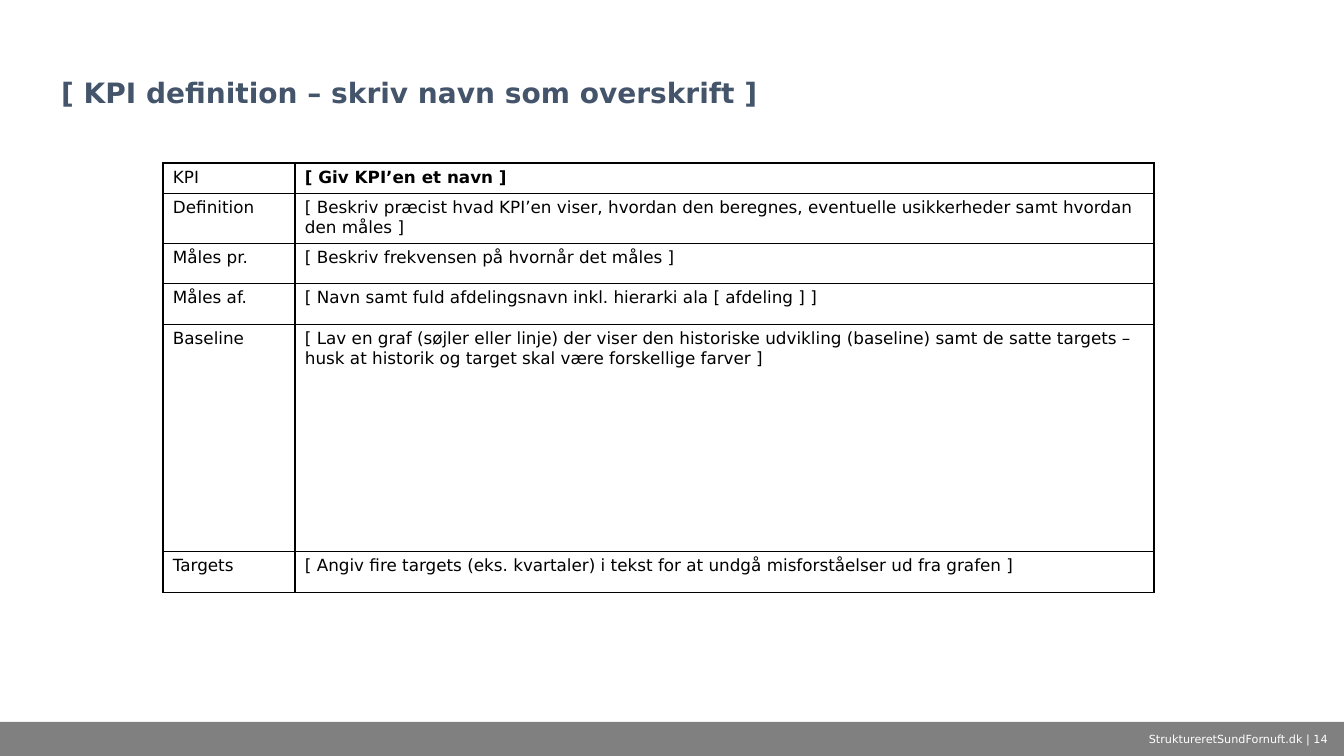
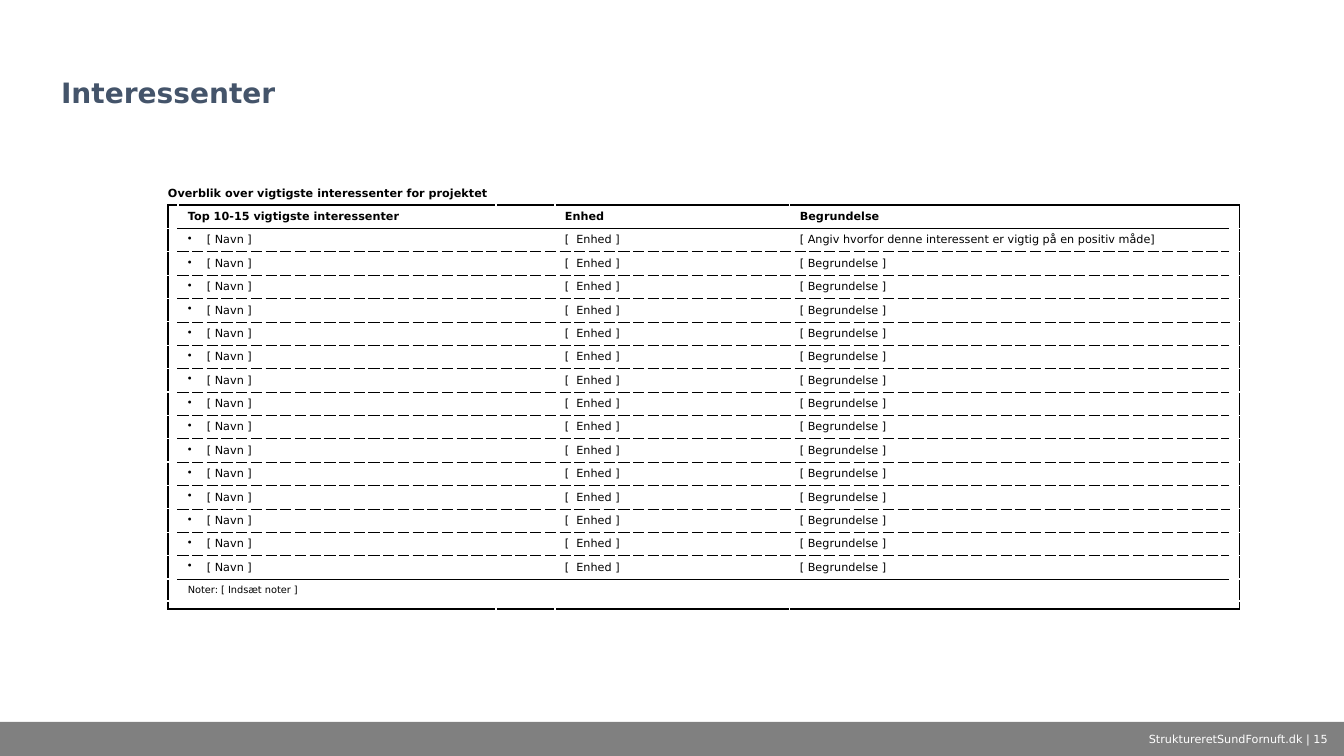
from dataclasses import dataclass

from lxml.etree import SubElement
from pptx import Presentation
from pptx.dml.color import RGBColor
from pptx.enum.shapes import MSO_SHAPE as Shape
from pptx.enum.text import MSO_ANCHOR as Anchor, MSO_AUTO_SIZE as AutoSize, PP_ALIGN as Align
from pptx.oxml.ns import qn
from pptx.util import Pt


@dataclass(frozen=True)
class Theme:
    font: str = "DejaVu Sans"
    title_color: str = "44546A"
    band_color: str = "808080"
    ink: str = "000000"
    paper: str = "FFFFFF"
    title_size: int = 20
    definition_size: int = 12
    small_size: int = 8
    note_size: int = 7
    empty_size: int = 1


THEME = Theme()
SLIDE_WIDTH, SLIDE_HEIGHT = 1344, 756
EMU_PER_PX = 12192000 / SLIDE_WIDTH
TITLE_BOX = (51, 17, 1241, 98)
BAND_BOX = (0, 722, 1344, 34)
FOOTER_BOX = (1133, 722, 211, 34)
FOOTER_TEXT = "StruktureretSundFornuft.dk"
FIRST_PAGE = 14
NO_GRID_STYLE = "{2D5ABB26-0587-4C30-8999-92F81FD0307C}"
CELL_MARGINS = (10, 5, 10, 5)
NO_MARGINS = (0, 0, 0, 0)

KPI_TITLE = "[ KPI definition – skriv navn som overskrift ]"
KPI_ORIGIN = (163, 163)
KPI_COLUMNS = [132, 859]
KPI_ROWS = [
    (30, "KPI", "[ Giv KPI’en et navn ]"),
    (50, "Definition", "[ Beskriv præcist hvad KPI’en viser, hvordan den beregnes, "
                       "eventuelle usikkerheder samt hvordan den måles ]"),
    (40, "Måles pr.", "[ Beskriv frekvensen på hvornår det måles ]"),
    (41, "Måles af.", "[ Navn samt fuld afdelingsnavn inkl. hierarki ala [ afdeling ] ]"),
    (227, "Baseline", "[ Lav en graf (søjler eller linje) der viser den historiske udvikling "
                      "(baseline) samt de satte targets – husk at historik og target skal "
                      "være forskellige farver ]"),
    (41, "Targets", "[ Angiv fire targets (eks. kvartaler) i tekst for at undgå "
                    "misforståelser ud fra grafen ]"),
]

STAKEHOLDER_TITLE = "Interessenter"
STAKEHOLDER_ORIGIN = (168, 179)
STAKEHOLDER_COLUMNS = [10, 318, 59, 235, 440, 10]
NAME_COLUMN, UNIT_COLUMN, REASON_COLUMN = 1, 3, 4
STAKEHOLDER_HEADING = "Overblik over vigtigste interessenter for projektet"
STAKEHOLDER_HEADERS = ("Top 10-15 vigtigste interessenter", "Enhed", "Begrundelse")
STAKEHOLDER_NOTE = "Noter: [ Indsæt noter ]"
REASONS = ["[ Angiv hvorfor denne interessent er vigtig på en positiv måde]"] + ["[ Begrundelse ]"] * 14
STAKEHOLDERS = [("[ Navn ]", "[  Enhed ]", reason) for reason in REASONS]
SPACER_HEIGHT, HEADING_HEIGHT, LINE_HEIGHT, NOTE_HEIGHT = 8, 18, 23, 22
BULLET_INDENT = 19

SOLID = (THEME.ink, 1, "solid")
HIDDEN = (THEME.paper, 1, "solid")
HEADER_RULE = (THEME.ink, 0.25, "solid")
ROW_RULE = (THEME.ink, 0.5, "dash")
LAST_RULE = (THEME.ink, 0.5, "solid")


def px(length):
    return round(length * EMU_PER_PX)


def px_box(box):
    return [px(length) for length in box]


def add_run(paragraph, text, size, color=THEME.ink, bold=False):
    run = paragraph.add_run()
    run.text = text
    run.font.name = THEME.font
    run.font.size = Pt(size)
    run.font.bold = bold
    run.font.color.rgb = RGBColor.from_string(color)


def add_band(slide, layout):
    band = slide.shapes.add_shape(Shape.RECTANGLE, *px_box(BAND_BOX))
    band.shadow.inherit = False
    band.fill.solid()
    band.fill.fore_color.rgb = RGBColor.from_string(THEME.band_color)
    band.line.fill.background()
    layout.shapes.element.insert(2, band.element)


def add_titled_slide(presentation, layout, title_text, page):
    slide = presentation.slides.add_slide(layout)
    title = slide.shapes.title
    title.left, title.top, title.width, title.height = px_box(TITLE_BOX)
    frame = title.text_frame
    frame.auto_size = AutoSize.NONE
    frame.vertical_anchor = Anchor.BOTTOM
    paragraph = frame.paragraphs[0]
    paragraph.alignment = Align.LEFT
    paragraph.line_spacing = 0.9
    add_run(paragraph, title_text, THEME.title_size, THEME.title_color, True)

    footer = slide.shapes.add_textbox(*px_box(FOOTER_BOX)).text_frame
    footer.word_wrap = True
    footer.vertical_anchor = Anchor.MIDDLE
    paragraph = footer.paragraphs[0]
    paragraph.alignment = Align.CENTER
    add_run(paragraph, f"{FOOTER_TEXT} | {page}", THEME.small_size, THEME.paper)
    return slide


def add_plain_table(slide, origin, columns, heights):
    box = px_box((*origin, sum(columns), sum(heights)))
    table = slide.shapes.add_table(len(heights), len(columns), *box).table
    table.first_row = table.horz_banding = False
    table._tbl.tblPr.find(qn("a:tableStyleId")).text = NO_GRID_STYLE
    for column, width in zip(table.columns, columns):
        column.width = px(width)
    for row, height in zip(table.rows, heights):
        row.height = px(height)
    return table


def set_margins(cell, margins):
    cell.margin_left, cell.margin_top, cell.margin_right, cell.margin_bottom = px_box(margins)


def style_cell(cell, left, right, top, bottom):
    properties = cell._tc.get_or_add_tcPr()
    for side, border in zip("LRTB", (left, right, top, bottom)):
        if border:
            color, width, dash = border
            line = SubElement(properties, qn(f"a:ln{side}"), w=str(Pt(width)))
            SubElement(SubElement(line, qn("a:solidFill")), qn("a:srgbClr"), val=color)
            SubElement(line, qn("a:prstDash"), val=dash)
    cell.fill.background()


def write_cell(cell, text, size, bold=False, anchor=Anchor.TOP, margins=CELL_MARGINS, bullet=False):
    set_margins(cell, margins)
    cell.vertical_anchor = anchor
    paragraph = cell.text_frame.paragraphs[0]
    if bullet:
        properties = paragraph._p.get_or_add_pPr()
        properties.set("marL", str(px(BULLET_INDENT)))
        properties.set("indent", str(-px(BULLET_INDENT)))
        SubElement(properties, qn("a:buChar"), char="•")
    add_run(paragraph, text, size, bold=bold)


def shrink_empty_cell(cell):
    set_margins(cell, NO_MARGINS)
    paragraph = cell.text_frame.paragraphs[0]
    SubElement(paragraph._p, qn("a:endParaRPr"), sz=str(THEME.empty_size * 100))


def fill_kpi_slide(slide):
    table = add_plain_table(slide, KPI_ORIGIN, KPI_COLUMNS, [row[0] for row in KPI_ROWS])
    for row_index, (_, *texts) in enumerate(KPI_ROWS):
        for column_index, text in enumerate(texts):
            cell = table.cell(row_index, column_index)
            style_cell(cell, SOLID, SOLID, SOLID, SOLID)
            write_cell(cell, text, THEME.definition_size, bold=(row_index, column_index) == (0, 1))


def fill_stakeholder_slide(slide):
    count = len(STAKEHOLDERS)
    heights = [SPACER_HEIGHT, HEADING_HEIGHT, *[LINE_HEIGHT] * (count + 1), NOTE_HEIGHT, SPACER_HEIGHT]
    table = add_plain_table(slide, STAKEHOLDER_ORIGIN, STAKEHOLDER_COLUMNS, heights)
    last_row, last_column = len(heights) - 1, len(STAKEHOLDER_COLUMNS) - 1
    heading_row, header_row, note_row = 1, 2, last_row - 1
    inner_rules = [HIDDEN, SOLID, HEADER_RULE, *[ROW_RULE] * (count - 1), LAST_RULE, HIDDEN, SOLID]
    edge_rules = [SOLID if rule == SOLID else HIDDEN for rule in inner_rules]

    for row_index in range(last_row + 1):
        frame_line = SOLID if row_index >= header_row else None
        for column_index in range(last_column + 1):
            rules = edge_rules if column_index in (0, last_column) else inner_rules
            style_cell(
                table.cell(row_index, column_index),
                frame_line if column_index == 0 else HIDDEN,
                frame_line if column_index == last_column else HIDDEN,
                rules[row_index - 1] if row_index else None,
                rules[row_index],
            )

    table.cell(heading_row, 0).merge(table.cell(heading_row, last_column - 1))
    table.cell(note_row, NAME_COLUMN).merge(table.cell(note_row, REASON_COLUMN))
    write_cell(table.cell(heading_row, 0), STAKEHOLDER_HEADING, THEME.small_size, True, margins=(0, 0, 0, 4))
    write_cell(table.cell(note_row, NAME_COLUMN), STAKEHOLDER_NOTE, THEME.note_size)
    for row_index, texts in enumerate([STAKEHOLDER_HEADERS, *STAKEHOLDERS], header_row):
        is_header = row_index == header_row
        for column_index, text in zip((NAME_COLUMN, UNIT_COLUMN, REASON_COLUMN), texts):
            write_cell(
                table.cell(row_index, column_index), text, THEME.small_size, is_header, Anchor.MIDDLE,
                bullet=column_index == NAME_COLUMN and not is_header,
            )
    for cell in table.iter_cells():
        if not cell.text_frame.text:
            shrink_empty_cell(cell)


def main():
    presentation = Presentation()
    presentation.slide_width, presentation.slide_height = px(SLIDE_WIDTH), px(SLIDE_HEIGHT)
    layout = presentation.slide_layouts[5]
    pages = [(KPI_TITLE, fill_kpi_slide), (STAKEHOLDER_TITLE, fill_stakeholder_slide)]
    for page, (title_text, fill_slide) in enumerate(pages, FIRST_PAGE):
        slide = add_titled_slide(presentation, layout, title_text, page)
        if page == FIRST_PAGE:
            add_band(slide, layout)
        fill_slide(slide)
    presentation.save("out.pptx")


if __name__ == "__main__":
    main()
